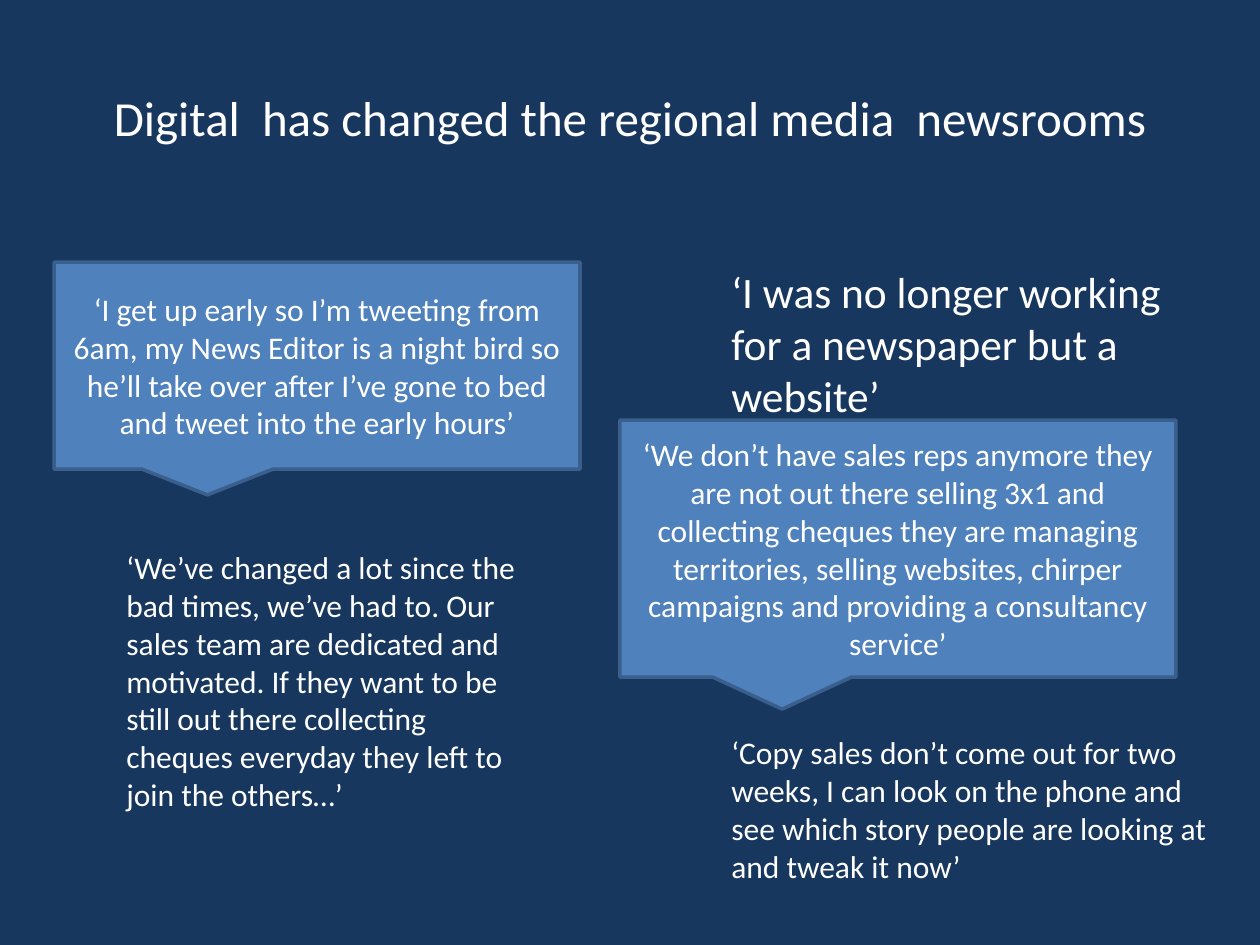
from dataclasses import dataclass

import pptx
import pptx.dml.color
import pptx.enum.shapes
import pptx.enum.text
import pptx.util

EMU_PER_PX = 914400 / 126
FONT = "Calibri"
COLOURS = {
    "background": "17375E",
    "callout": "4F81BD",
    "outline": "3A5F8C",
    "text": "FFFFFF",
}
ALIGN = pptx.enum.text.PP_ALIGN
ANCHOR = pptx.enum.text.MSO_ANCHOR


@dataclass(frozen=True)
class Quote:
    words: str
    left: int
    top: int
    width: int
    height: int
    size: float = 18
    is_callout: bool = False


HEADLINE = Quote("Digital  has changed the regional media  newsrooms",
                 63, 38, 1134, 158, size=28)
QUOTES = [
    Quote("‘I get up early so I’m tweeting from 6am, my News Editor is a night bird "
          "so he’ll take over after I’ve gone to bed and tweet into the early hours’",
          54, 262, 526, 207, is_callout=True),
    Quote("‘We don’t have sales reps anymore they are not out there selling 3x1 and "
          "collecting cheques they are managing territories, selling websites, chirper "
          "campaigns and providing a consultancy service’",
          620, 420, 556, 257, is_callout=True),
    Quote("‘I was no longer working for a newspaper but a website’",
          719, 259, 478, 152, size=24.8),
    Quote("‘We’ve changed a lot since the bad times, we’ve had to. Our sales team are "
          "dedicated and motivated. If they want to be still out there collecting "
          "cheques everyday they left to join the others…’",
          114, 542, 417, 318),
    Quote("‘Copy sales don’t come out for two weeks, I can look on the phone and see "
          "which story people are looking at and tweak it now’",
          719, 727, 507, 166),
]


def px(length: int) -> pptx.util.Emu:
    return pptx.util.Emu(round(length * EMU_PER_PX))


def colour(role: str) -> pptx.dml.color.RGBColor:
    return pptx.dml.color.RGBColor.from_string(COLOURS[role])


def write(frame, words: str, *, size: float, align=ALIGN.LEFT, anchor=ANCHOR.TOP) -> None:
    frame.word_wrap = True
    frame.vertical_anchor = anchor
    paragraph = frame.paragraphs[0]
    paragraph.alignment = align
    run = paragraph.add_run()
    run.text = words
    run.font.name = FONT
    run.font.size = pptx.util.Pt(size)
    run.font.color.rgb = colour("text")


def draw_quote(slide, quote: Quote, **text_format) -> None:
    box = [px(n) for n in (quote.left, quote.top, quote.width, quote.height)]
    if quote.is_callout:
        holder = slide.shapes.add_shape(
            pptx.enum.shapes.MSO_SHAPE.RECTANGULAR_CALLOUT, *box)
        holder.shadow.inherit = False
        holder.fill.solid()
        holder.fill.fore_color.rgb = colour("callout")
        holder.line.color.rgb = colour("outline")
        holder.line.width = pptx.util.Pt(2)
        text_format = {"align": ALIGN.CENTER, "anchor": ANCHOR.MIDDLE}
    else:
        holder = slide.shapes.add_textbox(*box)
    write(holder.text_frame, quote.words, size=quote.size, **text_format)


def main() -> None:
    deck = pptx.Presentation()
    deck.slide_width, deck.slide_height = px(1260), px(945)
    slide = deck.slides.add_slide(deck.slide_layouts[6])
    slide.background.fill.solid()
    slide.background.fill.fore_color.rgb = colour("background")

    draw_quote(slide, HEADLINE, align=ALIGN.CENTER, anchor=ANCHOR.MIDDLE)
    for quote in QUOTES:
        draw_quote(slide, quote)
    deck.save("out.pptx")


if __name__ == "__main__":
    main()
